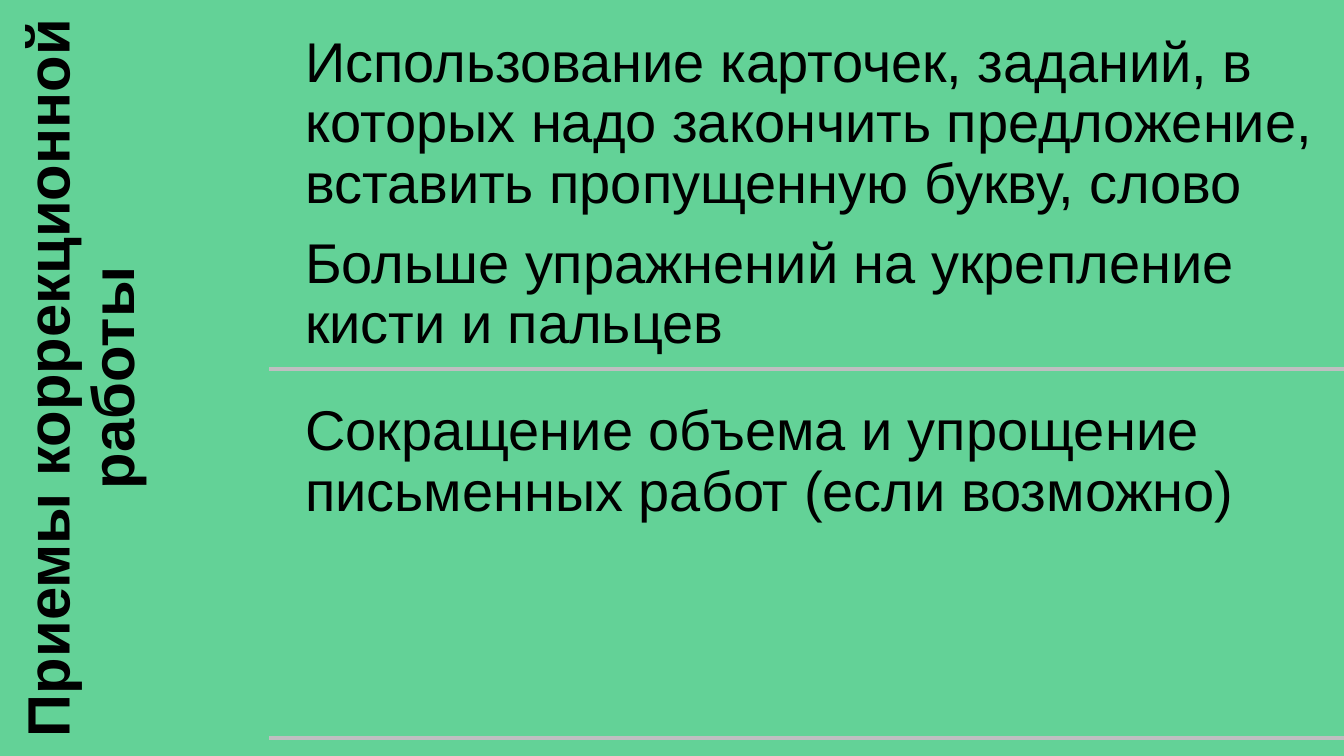
from lxml.etree import SubElement
from pptx import Presentation
from pptx.dml.color import RGBColor
from pptx.enum.shapes import MSO_CONNECTOR as Connector
from pptx.enum.text import MSO_ANCHOR as Anchor, MSO_AUTO_SIZE as AutoSize, PP_ALIGN as Align
from pptx.oxml.ns import qn
from pptx.util import Pt

PAGE_WIDTH, PAGE_HEIGHT = 720, 405
TITLE_WIDTH = 144
TEXT_LEFT = 154.8
ROW_TOP, ROW_PITCH, ROW_HEIGHT = 9.4, 197.6, 188.2
RULE_TOP = 197.8

ROWS = [
    [
        "Использование карточек, заданий, в которых надо закончить предложение, "
        "вставить пропущенную букву, слово",
        "Больше упражнений на укрепление кисти и пальцев",
    ],
    ["Сокращение объема и упрощение письменных работ (если возможно)"],
]


def color(value):
    return RGBColor.from_string(value)


def write_text(box, texts, size, bold=False, align=Align.LEFT, inset=8.64):
    frame = box.text_frame
    frame.word_wrap = True
    frame.auto_size = AutoSize.NONE
    frame.vertical_anchor = Anchor.TOP
    frame.margin_left = frame.margin_right = Pt(inset)
    frame.margin_top = frame.margin_bottom = Pt(inset)
    for index, text in enumerate(texts):
        para = frame.add_paragraph() if index else frame.paragraphs[0]
        para.alignment = align
        para.line_spacing = 0.9
        para.space_before = Pt(0)
        para.space_after = Pt(size * 0.35)
        span = para.add_run()
        span.text = text
        span.font.name = "Arial"
        span.font.size = Pt(size)
        span.font.bold = bold
        span.font.color.rgb = color("000000")


def add_vertical_title(page, text):
    title = page.shapes.title
    shift = (PAGE_HEIGHT - TITLE_WIDTH) / 2
    title.left, title.top = Pt(-shift), Pt(shift)
    title.width, title.height = Pt(PAGE_HEIGHT), Pt(TITLE_WIDTH)
    title.rotation = 270
    write_text(title, [text], size=32, bold=True, align=Align.CENTER, inset=9.6)


def add_row_text(page, top, texts):
    box = page.shapes.add_textbox(
        Pt(TEXT_LEFT), Pt(top), Pt(PAGE_WIDTH - TEXT_LEFT), Pt(ROW_HEIGHT)
    )
    write_text(box, texts, size=30)


def add_rule(page, top):
    rule = page.shapes.add_connector(
        Connector.STRAIGHT, Pt(TITLE_WIDTH), Pt(top), Pt(PAGE_WIDTH), Pt(top)
    )
    rule.line.color.rgb = color("BFBFC1")
    rule.line.width = Pt(2)
    SubElement(rule._element.spPr, qn("a:effectLst"))


def main():
    deck = Presentation()
    deck.slide_width, deck.slide_height = Pt(PAGE_WIDTH), Pt(PAGE_HEIGHT)
    page = deck.slides.add_slide(deck.slide_layouts.get_by_name("Title Only"))
    fill = page.background.fill
    fill.solid()
    fill.fore_color.rgb = color("63D297")

    add_vertical_title(page, "Приемы коррекционной работы")
    for index, texts in enumerate(ROWS):
        offset = index * ROW_PITCH
        add_row_text(page, ROW_TOP + offset, texts)
        add_rule(page, RULE_TOP + offset)

    deck.save("out.pptx")


if __name__ == "__main__":
    main()
